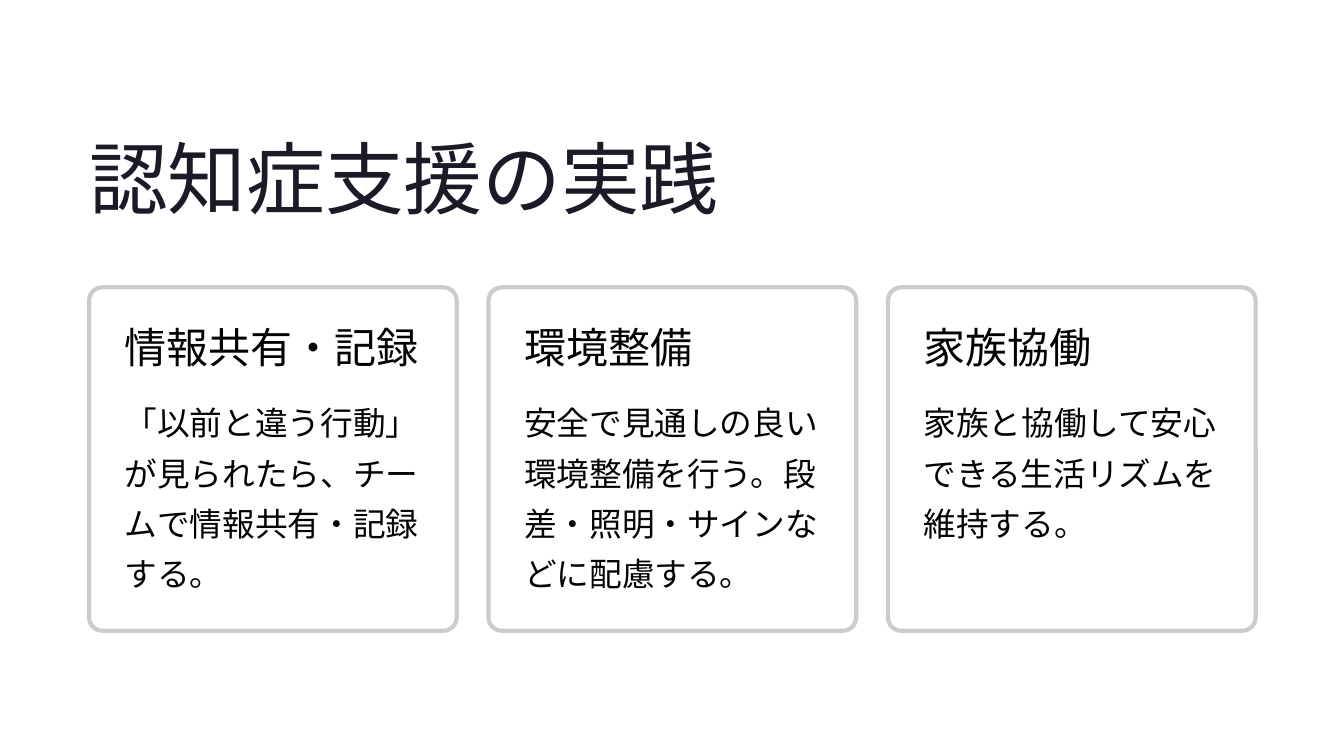
"""Build a slide with a title and three outlined cards on dementia support."""
from dataclasses import dataclass

import pptx
import pptx.dml.color
import pptx.enum.lang
import pptx.enum.shapes
import pptx.enum.text
import pptx.oxml
import pptx.oxml.ns
import pptx.slide
import pptx.text.text
import pptx.util

Pt = pptx.util.Pt
RGBColor = pptx.dml.color.RGBColor

WHITE = RGBColor(0xFF, 0xFF, 0xFF)
BORDER = RGBColor(0xCC, 0xCC, 0xCC)
TITLE_INK = RGBColor(0x1B, 0x1B, 0x27)
INK = RGBColor(0x03, 0x03, 0x03)

LEFT, TOP = 76.3, 246.3
CARD_W, CARD_H = 315.2, 294.4
CARD_PITCH = 342.4
PAD = 30.6
TEXT_W = CARD_W - 2 * PAD
BODY_DROP = 90


@dataclass(frozen=True)
class TextStyle:
    font: str
    size: float
    line: float
    color: RGBColor
    wrap: bool


@dataclass(frozen=True)
class Card:
    heading: str
    body: str
    body_h: float


TITLE = TextStyle("Inter", 67.5, 84.5, TITLE_INK, False)
HEADING = TextStyle("Inter", 36, 42, INK, False)
BODY = TextStyle("Roboto", 28, 43, INK, True)

CARDS = (
    Card("情報共有・記録", "「以前と違う行動」が見られたら、チームで情報共有・記録する。", 173.5),
    Card("環境整備", "安全で見通しの良い環境整備を行う。段差・照明・サインなどに配慮する。", 173.5),
    Card("家族協働", "家族と協働して安心できる生活リズムを維持する。", 130.3),
)


def write_text(tf: pptx.text.text.TextFrame, text: str, style: TextStyle) -> None:
    tf.margin_left = tf.margin_top = tf.margin_right = tf.margin_bottom = 0
    tf.auto_size = pptx.enum.text.MSO_AUTO_SIZE.NONE
    tf.vertical_anchor = pptx.enum.text.MSO_ANCHOR.TOP
    tf.word_wrap = style.wrap
    tf.text = text
    p = tf.paragraphs[0]
    p.alignment = pptx.enum.text.PP_ALIGN.LEFT
    p.line_spacing = Pt(style.line)
    p.space_before = Pt(0)
    p.font.name = style.font
    p.font.size = Pt(style.size)
    p.font.color.rgb = style.color
    p.font.language_id = pptx.enum.lang.MSO_LANGUAGE_ID.JAPANESE
    latin = p._p.find(".//" + pptx.oxml.ns.qn("a:latin"))
    east_asian = pptx.oxml.parse_xml(
        f'<a:ea {pptx.oxml.ns.nsdecls("a")} typeface="{style.font}"/>'
    )
    latin.addnext(east_asian)


def add_text(slide: pptx.slide.Slide, x: float, y: float, h: float,
             text: str, style: TextStyle) -> None:
    sp = slide.shapes.add_textbox(Pt(x), Pt(y), Pt(TEXT_W), Pt(h))
    write_text(sp.text_frame, text, style)


def add_card(slide: pptx.slide.Slide, x: float, card: Card) -> None:
    sp = slide.shapes.add_shape(
        pptx.enum.shapes.MSO_SHAPE.ROUNDED_RECTANGLE,
        Pt(x), Pt(TOP), Pt(CARD_W), Pt(CARD_H),
    )
    sp.adjustments[0] = 0.039
    sp.shadow.inherit = False
    sp.fill.solid()
    sp.fill.fore_color.rgb = WHITE
    fill_color = sp._element.spPr.find(".//" + pptx.oxml.ns.qn("a:srgbClr"))
    fill_color.append(pptx.oxml.parse_xml(
        f'<a:alpha {pptx.oxml.ns.nsdecls("a")} val="95000"/>'
    ))
    sp.line.color.rgb = BORDER
    sp.line.width = Pt(3.6)
    add_text(slide, x + PAD, TOP + PAD, 42.5, card.heading, HEADING)
    add_text(slide, x + PAD, TOP + BODY_DROP, card.body_h, card.body, BODY)


def main() -> None:
    prs = pptx.Presentation()
    prs.slide_width, prs.slide_height = Pt(1152), Pt(648)
    slide = prs.slides.add_slide(prs.slide_layouts.get_by_name("Title Only"))
    title = slide.shapes.title
    title.left, title.top = Pt(LEFT), Pt(107.3)
    title.width, title.height = Pt(679), Pt(85)
    write_text(title.text_frame, "認知症支援の実践", TITLE)
    for i, card in enumerate(CARDS):
        add_card(slide, LEFT + i * CARD_PITCH, card)
    prs.save("out.pptx")


if __name__ == "__main__":
    main()
